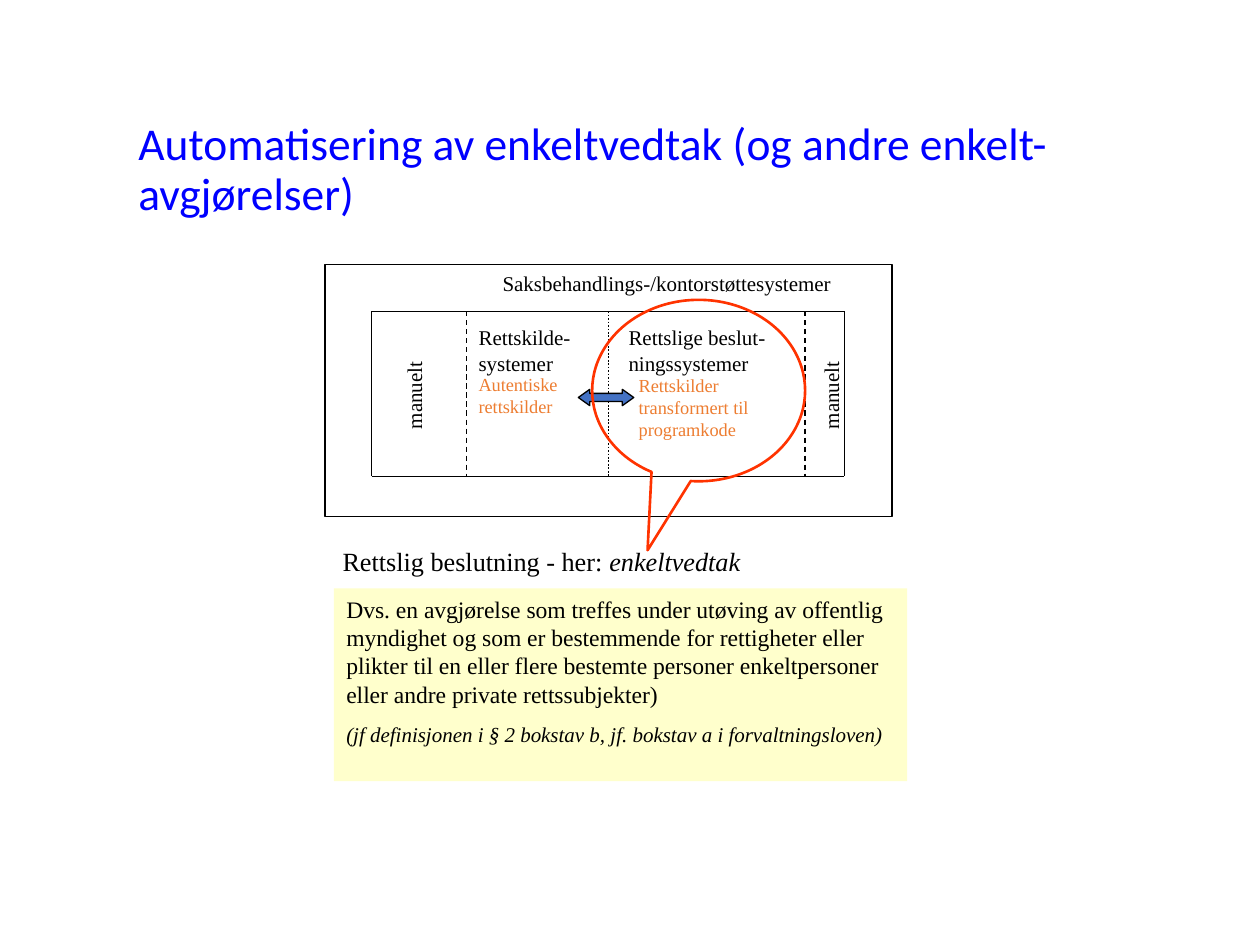
from lxml import etree
from pptx import Presentation
from pptx.dml.color import RGBColor
from pptx.enum.dml import MSO_LINE
from pptx.enum.shapes import MSO_CONNECTOR, MSO_SHAPE
from pptx.enum.text import MSO_ANCHOR, PP_ALIGN
from pptx.oxml.ns import qn
from pptx.util import Inches, Pt

RECT = MSO_SHAPE.RECTANGLE
ARROW = MSO_SHAPE.LEFT_RIGHT_ARROW
CALLOUT = MSO_SHAPE.OVAL_CALLOUT
STRAIGHT = MSO_CONNECTOR.STRAIGHT
DASH, DOT = MSO_LINE.DASH, MSO_LINE.ROUND_DOT
TOP, MIDDLE = MSO_ANCHOR.TOP, MSO_ANCHOR.MIDDLE
LEFT = PP_ALIGN.LEFT

BLACK = RGBColor(0x00, 0x00, 0x00)
TITLE_BLUE = RGBColor(0x00, 0x00, 0xFF)
ARROW_BLUE = RGBColor(0x44, 0x72, 0xC4)
ORANGE = RGBColor(0xED, 0x7D, 0x31)
RED = RGBColor(0xFF, 0x33, 0x00)
YELLOW = RGBColor(0xFF, 0xFF, 0xCC)


class SlideBuilder:
    font = "Times New Roman"
    line_width = 0.75

    def __init__(self, slide):
        self.slide = slide

    def fill_text(self, sp, paragraphs, anchor=TOP, wrap=True, para=None, **base):
        """Each paragraph is a list of (text, font overrides) runs."""
        tf = sp.text_frame
        tf.word_wrap = wrap
        tf.vertical_anchor = anchor
        for i, runs in enumerate(paragraphs):
            p = tf.paragraphs[0] if i == 0 else tf.add_paragraph()
            for name, value in {"alignment": LEFT, **(para or {})}.items():
                if i > 0 or name != "space_before":
                    setattr(p, name, value)
            for text, override in runs:
                r = p.add_run()
                r.text = text
                fmt = {"name": self.font, "color": BLACK, **base, **override}
                r.font.color.rgb = fmt.pop("color")
                for name, value in fmt.items():
                    setattr(r.font, name, value)

    def text(self, box, paragraphs, rotation=0, **fmt):
        sp = self.slide.shapes.add_textbox(*map(Inches, box))
        sp.rotation = rotation
        self.fill_text(sp, paragraphs, **fmt)

    def label(self, box, *lines, size=12, color=BLACK, rotation=0):
        self.text(box, [[(line, {})] for line in lines], rotation,
                  wrap=False, size=Pt(size), color=color)

    def shape(self, kind, box, fill=None, line=None, width=line_width, adjust=()):
        sp = self.slide.shapes.add_shape(kind, *map(Inches, box))
        sp.shadow.inherit = False
        for i, value in enumerate(adjust):
            sp.adjustments[i] = value
        if fill is None:
            sp.fill.background()
        else:
            sp.fill.solid()
            sp.fill.fore_color.rgb = fill
        if line is None:
            sp.line.fill.background()
        else:
            sp.line.color.rgb = line
            sp.line.width = Pt(width)
        return sp

    def line(self, x1, y1, x2, y2, dash=None, width=line_width):
        c = self.slide.shapes.add_connector(STRAIGHT, *map(Inches, (x1, y1, x2, y2)))
        c.line.color.rgb = BLACK
        c.line.width = Pt(width)
        if dash is not None:
            c.line.dash_style = dash
        etree.SubElement(c._element.spPr, qn("a:effectLst"))


def main():
    prs = Presentation()
    prs.slide_width, prs.slide_height = Inches(10), Inches(7.5)
    s = SlideBuilder(prs.slides.add_slide(prs.slide_layouts[6]))

    # Title
    s.text((1, 0.95, 8.56, 0.81),
           [[("Automatisering av enkeltvedtak (og andre enkelt-avgjørelser)", {})]],
           anchor=MIDDLE, para={"line_spacing": 0.9},
           name="Calibri", size=Pt(26), color=TITLE_BLUE)

    # Outer frame: office support systems
    s.shape(RECT, (2.58, 2.1, 4.5, 2), line=BLACK)
    s.label((3.89, 2.1, 2.84, 0.3), "Saksbehandlings-/kontorstøttesystemer")

    # Inner frame: two halves that share a dotted divider
    top, bottom = 2.47, 3.78
    left, divider, right = 2.95, 4.83, 6.7
    for x1, x2 in ((left, divider), (divider, right)):
        for y in (top, bottom):
            s.line(x1, y, x2, y)
    for x in (left, right):
        s.line(x, top, x, bottom)
    for x in (3.7, 6.39):
        s.line(x, top, x, bottom, DASH)
    s.line(divider, top, divider, bottom, DOT, 1)

    # Labels inside the halves
    for x in (2.91, 6.22):
        s.label((x, 2.98, 0.75, 0.3), "manuelt", rotation=270)
    s.label((3.7, 2.53, 0.94, 0.51), "Rettskilde-", "systemer")
    s.label((4.89, 2.53, 1.3, 0.51), "Rettslige beslut-", "ningssystemer")
    s.label((3.7, 2.91, 0.84, 0.45), "Autentiske", "rettskilder",
            size=10.5, color=ORANGE)
    s.label((4.97, 2.92, 1.09, 0.63), "Rettskilder", "transformert til",
            "programkode", size=10.5, color=ORANGE)
    s.shape(ARROW, (4.59, 3.09, 0.44, 0.13), ARROW_BLUE, BLACK, adjust=(0.5, 0.7))

    # Callout and the decision it points to
    s.shape(CALLOUT, (4.7, 2.38, 1.69, 1.44), line=RED, width=1.5,
            adjust=(-0.24, 0.88))
    s.text((2.62, 4.28, 3.48, 0.35),
           [[("Rettslig beslutning - her: ", {}), ("enkeltvedtak", {"italic": True})]],
           size=Pt(15))

    # Definition
    definition = s.shape(RECT, (2.65, 4.67, 4.55, 1.53), YELLOW)
    s.fill_text(definition, [
        [("Dvs. en avgjørelse som treffes under utøving av offentlig myndighet "
          "og som er bestemmende for rettigheter eller plikter til en eller flere "
          "bestemte personer enkeltpersoner eller andre private rettssubjekter)", {})],
        [("(jf definisjonen i § 2 bokstav b, jf. bokstav a i forvaltningsloven)",
          {"size": Pt(12), "italic": True})],
    ], para={"space_before": Pt(3.8), "space_after": Pt(3.8)}, size=Pt(13.5))

    prs.save("out.pptx")


if __name__ == "__main__":
    main()
